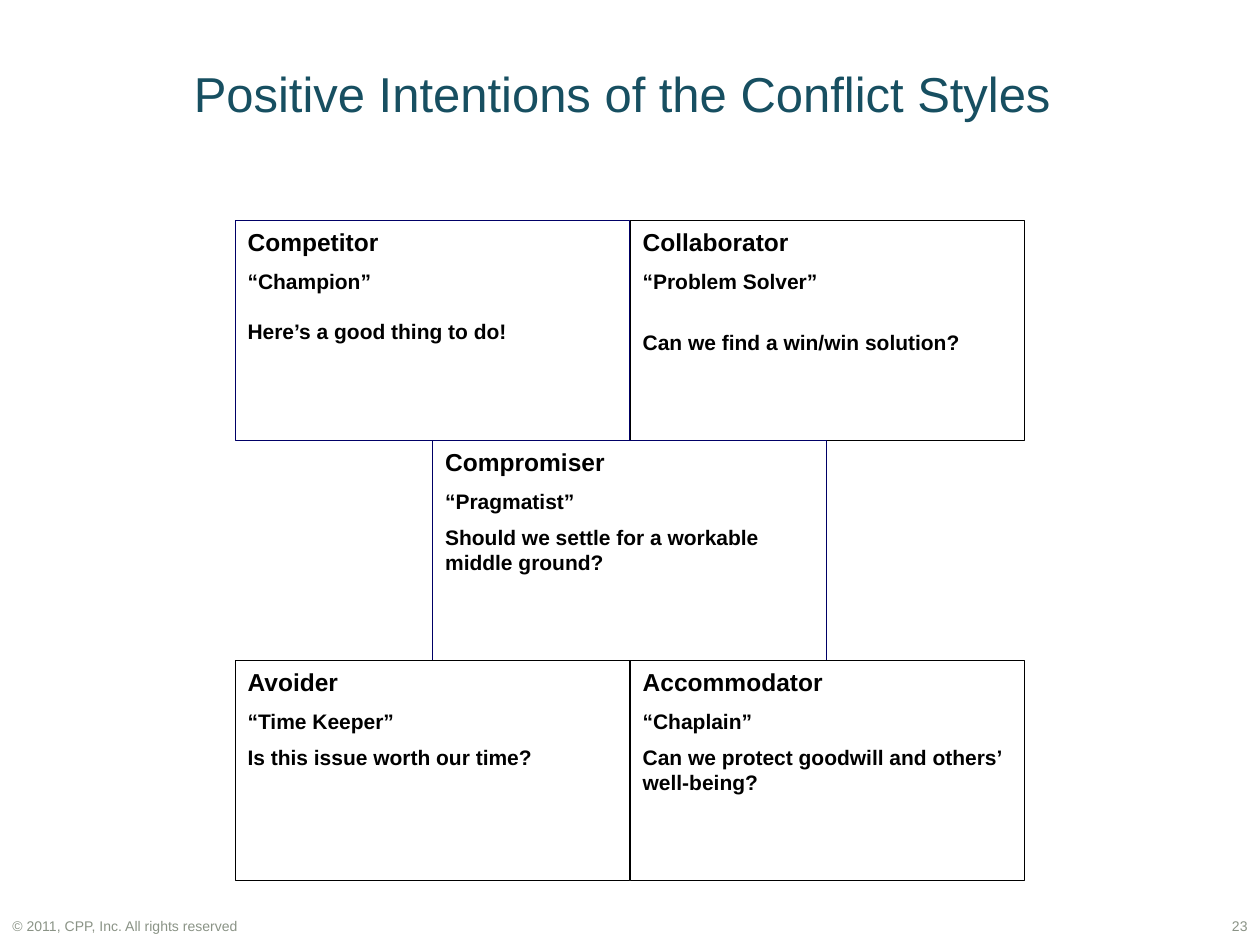
from dataclasses import dataclass

from pptx import Presentation
from pptx.dml.color import RGBColor
from pptx.enum.shapes import MSO_SHAPE as Shape
from pptx.enum.text import MSO_ANCHOR as Anchor, PP_ALIGN as Align
from pptx.util import Pt


@dataclass(frozen=True)
class Theme:
    font: str = "Arial"
    title_color: str = "174F61"
    footer_color: str = "8A9386"
    text_color: str = "000000"
    navy: str = "000066"
    black: str = "000000"
    title_size: float = 28
    style_size: float = 14
    body_size: float = 12
    footer_size: float = 8


theme = Theme()


def format_font(paragraph, size, color, bold=False):
    font = paragraph.font
    font.name = theme.font
    font.size = Pt(size)
    font.bold = bold
    font.color.rgb = RGBColor.from_string(color)


def add_label(slide, text, box, size, color, align=Align.LEFT, anchor=Anchor.TOP):
    label = slide.shapes.add_textbox(*map(Pt, box))
    text_frame = label.text_frame
    text_frame.word_wrap = True
    text_frame.vertical_anchor = anchor
    text_frame.text = text
    paragraph = text_frame.paragraphs[0]
    paragraph.alignment = align
    format_font(paragraph, size, color)


presentation = Presentation()
presentation.slide_width = Pt(720)
presentation.slide_height = Pt(540)
slide = presentation.slides.add_slide(presentation.slide_layouts[6])

# Title and footer
add_label(slide, "Positive Intentions of the Conflict Styles", (103.7, 16, 597.6, 74),
          theme.title_size, theme.title_color, anchor=Anchor.MIDDLE)
add_label(slide, "© 2011, CPP, Inc. All rights reserved", (0, 520.5, 228, 19.5),
          theme.footer_size, theme.footer_color)
add_label(slide, "23", (648, 520.5, 72, 19.5),
          theme.footer_size, theme.footer_color, align=Align.RIGHT)

# Conflict styles: column, row, line color, name, nickname, intention, gap above intention
styles = [
    (0, 0, theme.navy, "Competitor", "“Champion”", "Here’s a good thing to do!", 14),
    (1, 0, theme.black, "Collaborator", "“Problem Solver”",
     "Can we find a win/win solution?", 20.4),
    (0.5, 1, theme.navy, "Compromiser", "“Pragmatist”",
     "Should we settle for a workable middle ground?", 6),
    (0, 2, theme.black, "Avoider", "“Time Keeper”", "Is this issue worth our time?", 6),
    (1, 2, theme.black, "Accommodator", "“Chaplain”",
     "Can we protect goodwill and others’ well-being?", 6),
]
grid_left, grid_top = 134.4, 126
column_step, row_step = 225.75, 125.75
box_width, box_height = 225.2, 125.75

for column, row, line_color, name, nickname, intention, gap in styles:
    box = slide.shapes.add_shape(
        Shape.RECTANGLE,
        Pt(grid_left + column * column_step), Pt(grid_top + row * row_step),
        Pt(box_width), Pt(box_height))
    box.shadow.inherit = False
    box.fill.background()
    box.line.color.rgb = RGBColor.from_string(line_color)
    box.line.width = Pt(0.75)

    text_frame = box.text_frame
    text_frame.word_wrap = True
    text_frame.vertical_anchor = Anchor.TOP
    text_frame.text = "\n".join((name, nickname, intention))
    sizes = (theme.style_size, theme.body_size, theme.body_size)
    gaps_after = (7, gap, 0)
    for paragraph, size, gap_after in zip(text_frame.paragraphs, sizes, gaps_after):
        paragraph.alignment = Align.LEFT
        paragraph.space_after = Pt(gap_after)
        format_font(paragraph, size, theme.text_color, bold=True)

presentation.save("out.pptx")
